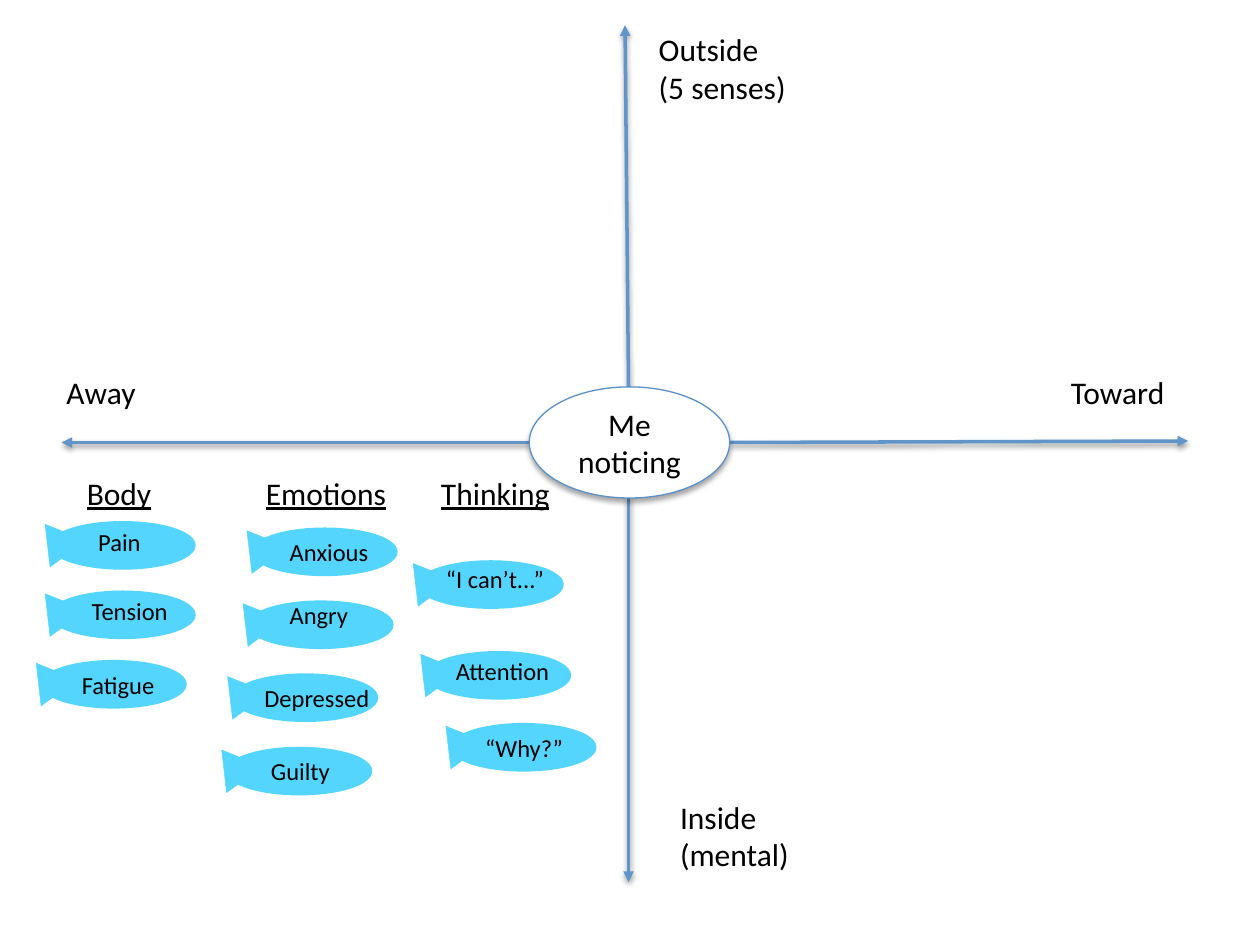
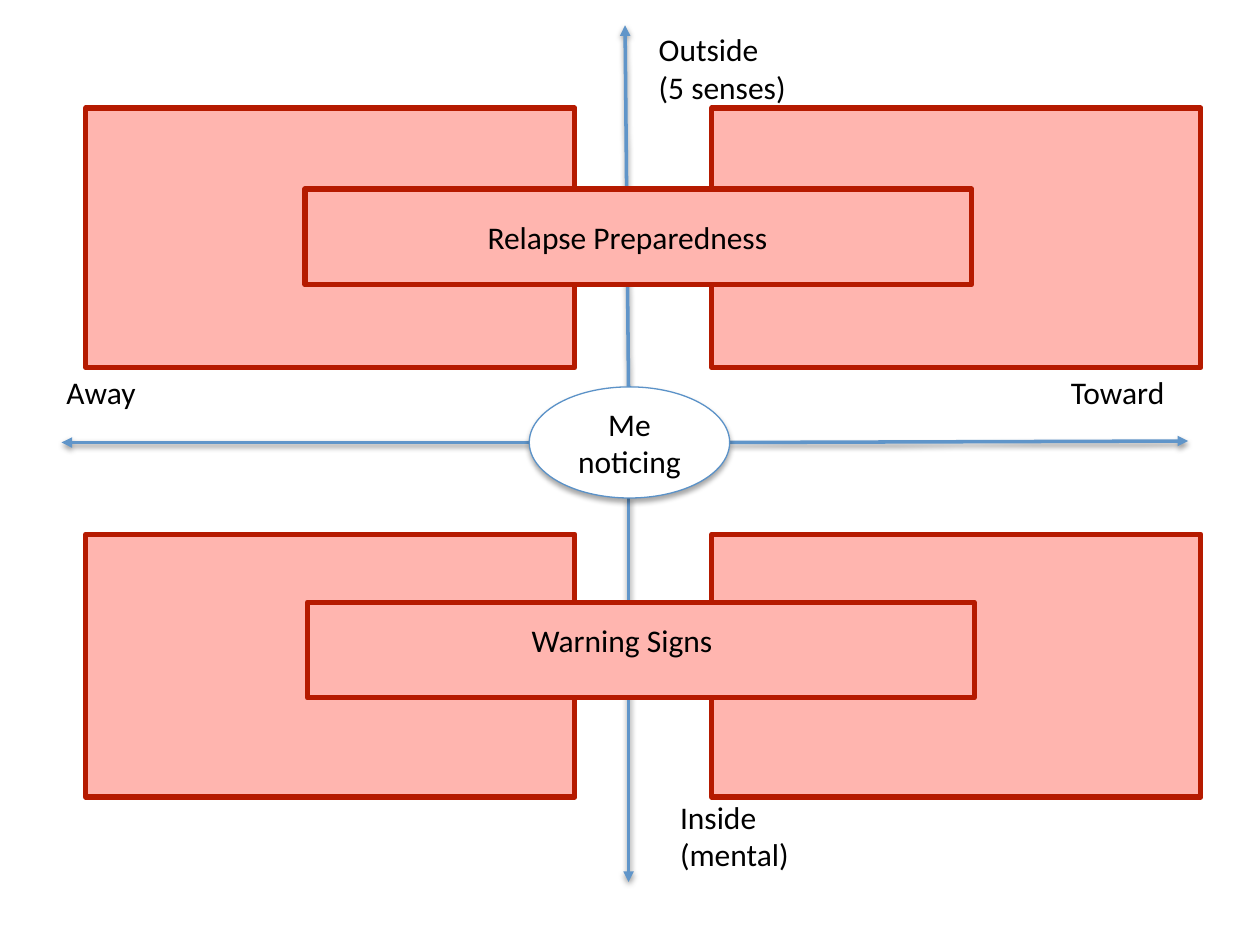
import dataclasses

import lxml.etree
import pptx
import pptx.dml.color
import pptx.enum.shapes
import pptx.enum.text
import pptx.oxml.ns
import pptx.util

Cm = pptx.util.Cm
Pt = pptx.util.Pt
qn = pptx.oxml.ns.qn
SHAPES = pptx.enum.shapes.MSO_SHAPE


@dataclasses.dataclass(frozen=True)
class Theme:
    font: str = "Calibri"
    text: str = "000000"
    axis: str = "6095C9"
    center_line: str = "5B92C8"
    white: str = "FFFFFF"
    fish: str = "53D5FD"
    frame_fill: str = "FFB5AF"
    frame_line: str = "B51A00"
    label_size: float = 18
    fish_size: float = 14
    inset: float = 0.1


THEME = Theme()
BLANK_LAYOUT = 6

# Axes: start and end, in cm
ARROWS = [
    ((12.67, 7.8), (12.6, 0.51)),
    ((14.71, 8.92), (23.95, 8.89)),
    ((10.67, 8.92), (1.24, 8.92)),
    ((12.67, 10.03), (12.67, 17.78)),
]
AXIS_LABELS = [
    (("Outside", "(5 senses)"), 13.18, 0.51),
    (("Inside", "(mental)"), 13.61, 15.98),
    (("Toward",), 21.49, 7.42),
    (("Away",), 1.24, 7.42),
]

# Column headings: text, left, width
HEADINGS = [("Body", 1.65, 1.55), ("Emotions", 5.26, 2.67), ("Thinking", 8.79, 2.44)]
HEADING_TOP = 9.45

# Fish: word, body position, word position, word width
FISH = [
    ("Pain", (1.04, 10.54), (1.88, 10.52), 1.09),
    ("Tension", (1.04, 11.94), (1.75, 11.91), 1.88),
    ("Fatigue", (0.86, 13.34), (1.55, 13.41), 1.7),
    ("Anxious", (5.11, 10.67), (5.74, 10.72), 1.83),
    ("Angry", (5.03, 12.14), (5.74, 11.99), 1.42),
    ("Depressed", (4.72, 13.61), (5.23, 13.67), 2.36),
    ("Guilty", (4.6, 15.09), (5.36, 15.14), 1.42),
    ("“I can’t...”", (8.46, 11.33), (8.89, 11.28), 2.34),
    ("Attention", (8.61, 13.16), (9.09, 13.13), 2.13),
    ("“Why?”", (9.12, 14.61), (9.68, 14.68), 1.8),
]
FISH_BODY = (2.87, 0.91)
FISH_TAIL = [(-0.03, 0.89), (0.69, 0.36), (-0.13, 0.03)]

# Quadrant frames, and banners: text, banner position, text position, text width
FRAME_LEFTS = (1.73, 14.35)
FRAME_ROWS = [(2.18, 5.23), (10.77, 5.3)]
FRAME_WIDTH = 9.86
BANNERS = [
    ("Relapse Preparedness", (6.15, 3.81), (9.73, 4.29), 5.92),
    ("Warning Signs", (6.2, 12.14), (10.62, 12.42), 3.91),
]
BANNER_SIZE = (13.44, 1.93)


def rgb(color):
    return pptx.dml.color.RGBColor.from_string(color)


def set_values(target, values):
    for name, value in values.items():
        setattr(target, name, value)


def set_line(shape, color, width):
    shape.line.color.rgb = rgb(color)
    shape.line.width = Pt(width)


def paint(shape, fill, line, width):
    """Give a shape a flat fill and outline."""
    shape.shadow.inherit = False
    shape.fill.solid()
    shape.fill.fore_color.rgb = rgb(fill)
    set_line(shape, line, width)


def drop_shadow(shape, distance, opacity):
    """Cast a soft shadow straight down."""
    properties = shape._element.spPr
    effects = properties.find(qn("a:effectLst"))
    if effects is None:
        effects = lxml.etree.SubElement(properties, qn("a:effectLst"))
    shadow = lxml.etree.SubElement(
        effects, qn("a:outerShdw"), blurRad=str(Pt(3)), dist=str(Pt(distance)),
        dir="5400000", rotWithShape="0")
    color = lxml.etree.SubElement(shadow, qn("a:srgbClr"), val="000000")
    lxml.etree.SubElement(color, qn("a:alpha"), val=str(opacity * 1000))


def write(shape, lines, size, wrap=True, underline=None, alignment=None):
    """Fill a shape with one paragraph per line."""
    frame = shape.text_frame
    margins = ("margin_left", "margin_top", "margin_right", "margin_bottom")
    set_values(frame, dict.fromkeys(margins, Cm(THEME.inset)))
    frame.word_wrap = wrap
    frame.text = "\n".join(lines)
    for paragraph in frame.paragraphs:
        paragraph.alignment = alignment
        font = paragraph.runs[0].font
        set_values(font, {"name": THEME.font, "size": Pt(size), "underline": underline})
        font.color.rgb = rgb(THEME.text)


def add_shape(slide, kind, position, size, fill, line, width):
    shape = slide.shapes.add_shape(kind, *map(Cm, (*position, *size)))
    paint(shape, fill, line, width)
    return shape


def add_label(slide, lines, position, width, size=THEME.label_size, **style):
    height = len(lines) * size * 0.042 + 2 * THEME.inset
    box = slide.shapes.add_textbox(*map(Cm, (*position, width, height)))
    write(box, lines, size, **style)


def add_arrow(slide, start, end):
    arrow = slide.shapes.add_connector(
        pptx.enum.shapes.MSO_CONNECTOR.STRAIGHT, *map(Cm, (*start, *end)))
    set_line(arrow, THEME.axis, 2)
    lxml.etree.SubElement(arrow.line._get_or_add_ln(), qn("a:tailEnd"), type="triangle")
    drop_shadow(arrow, 1.6, 38)


def add_axes(slide):
    """Draw the four arrows, the center and the axis labels."""
    for start, end in ARROWS:
        add_arrow(slide, start, end)
    center = add_shape(slide, SHAPES.OVAL, (10.67, 7.8), (4.04, 2.24),
                       THEME.white, THEME.center_line, 0.75)
    drop_shadow(center, 1.8, 35)
    write(center, ["Me noticing"], THEME.label_size,
          alignment=pptx.enum.text.PP_ALIGN.CENTER)
    center.text_frame.vertical_anchor = pptx.enum.text.MSO_ANCHOR.MIDDLE
    for lines, left, top in AXIS_LABELS:
        add_label(slide, lines, (left, top), 3.18)


def add_fish(slide, word, position, word_position, word_width):
    add_shape(slide, SHAPES.OVAL, position, FISH_BODY, THEME.fish, THEME.fish, 2)
    left, top = position
    points = [(Cm(left + x), Cm(top + y)) for x, y in FISH_TAIL]
    builder = slide.shapes.build_freeform(*points[0])
    builder.add_line_segments(points[1:], close=True)
    paint(builder.convert_to_shape(), THEME.fish, THEME.fish, 0.25)
    add_label(slide, [word], word_position, word_width, THEME.fish_size, wrap=False)


def add_frame(slide, position, size):
    add_shape(slide, SHAPES.RECTANGLE, position, size,
              THEME.frame_fill, THEME.frame_line, 3)


def build_fish_slide(slide):
    add_axes(slide)
    for heading, left, width in HEADINGS:
        add_label(slide, [heading], (left, HEADING_TOP), width, wrap=False, underline=True)
    for fish in FISH:
        add_fish(slide, *fish)


def build_relapse_slide(slide):
    for top, height in FRAME_ROWS:
        for left in FRAME_LEFTS:
            add_frame(slide, (left, top), (FRAME_WIDTH, height))
    add_axes(slide)
    for text, position, text_position, width in BANNERS:
        add_frame(slide, position, BANNER_SIZE)
        add_label(slide, [text], text_position, width, wrap=False)


def main():
    presentation = pptx.Presentation()
    set_values(presentation, {"slide_width": Cm(25.4), "slide_height": Cm(19.05)})
    layout = presentation.slide_layouts[BLANK_LAYOUT]
    for build in (build_fish_slide, build_relapse_slide):
        build(presentation.slides.add_slide(layout))
    presentation.save("out.pptx")


if __name__ == "__main__":
    main()
